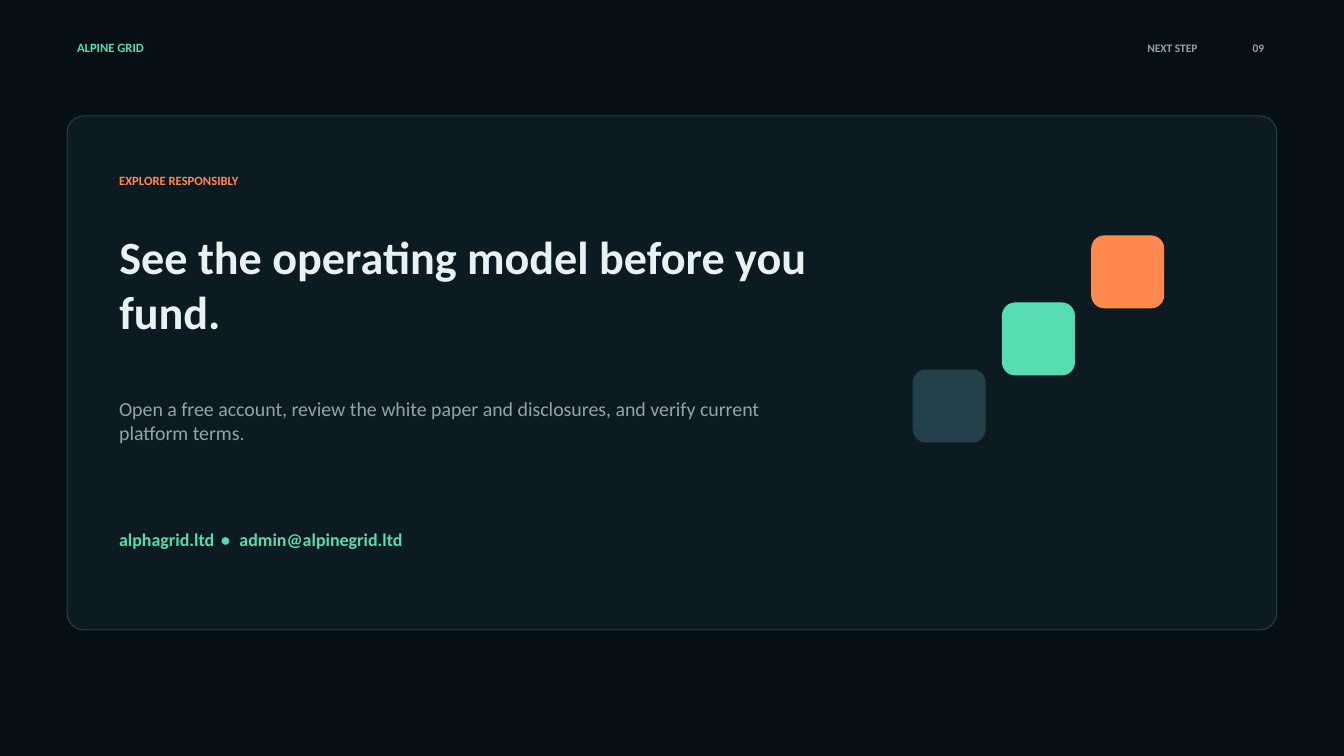
from dataclasses import dataclass

from pptx import Presentation
from pptx.dml.color import RGBColor
from pptx.enum import shapes, text
from pptx.util import Pt

NIGHT = RGBColor(0x06, 0x10, 0x14)
PANEL = RGBColor(0x0C, 0x1B, 0x21)
SLATE = RGBColor(0x24, 0x40, 0x4A)
MINT = RGBColor(0x56, 0xDC, 0xB0)
ORANGE = RGBColor(0xFF, 0x8A, 0x50)
MIST = RGBColor(0x91, 0xA4, 0xAC)
WHITE = RGBColor(0xE8, 0xF1, 0xF3)

LEFT, RIGHT = text.PP_ALIGN.LEFT, text.PP_ALIGN.RIGHT
HEADER_TOP, HEADER_HEIGHT = 25.2, 18
CONTENT_LEFT = 78
TILE_SIZE, TILE_STEP_X, TILE_STEP_Y = 51.4, 63.75, 47.9
FIRST_TILE_LEFT, FIRST_TILE_TOP = 652.3, 264.3


@dataclass
class Label:
    words: tuple[str, ...]
    left: float
    top: float
    width: float
    height: float
    size: float
    color: RGBColor
    bold: bool = True
    align: text.PP_ALIGN = LEFT


@dataclass
class Card:
    left: float
    top: float
    width: float
    height: float
    corner: float
    fill: RGBColor
    line: RGBColor


def write_label(box, label: Label) -> None:
    """Place a text box or placeholder and fill it with formatted runs."""
    for side in ("left", "top", "width", "height"):
        setattr(box, side, Pt(getattr(label, side)))
    frame_format = {"word_wrap": True, "auto_size": text.MSO_AUTO_SIZE.NONE,
                    "vertical_anchor": text.MSO_ANCHOR.MIDDLE}
    for key, value in frame_format.items():
        setattr(box.text_frame, key, value)
    paragraph = box.text_frame.paragraphs[0]
    paragraph.alignment = label.align
    font_format = {"name": "Calibri", "size": Pt(label.size), "bold": label.bold}
    for words in label.words:
        run = paragraph.add_run()
        run.text = words
        for key, value in font_format.items():
            setattr(run.font, key, value)
        run.font.color.rgb = label.color


def add_label(slide, label: Label):
    box = slide.shapes.add_textbox(0, 0, 0, 0)
    write_label(box, label)
    return box


def add_card(slide, card: Card) -> None:
    shape = slide.shapes.add_shape(
        shapes.MSO_SHAPE.ROUNDED_RECTANGLE,
        Pt(card.left), Pt(card.top), Pt(card.width), Pt(card.height))
    shape.adjustments[0] = card.corner
    shape.shadow.inherit = False
    shape.fill.solid()
    shape.fill.fore_color.rgb = card.fill
    shape.line.color.rgb = card.line
    shape.line.width = Pt(0.75)


def main() -> None:
    deck = Presentation()
    deck.slide_width, deck.slide_height = Pt(960), Pt(540)
    slide = deck.slides.add_slide(deck.slide_layouts.get_by_name("Title Only"))
    slide.background.fill.solid()
    slide.background.fill.fore_color.rgb = NIGHT

    # Panel and rising steps
    add_card(slide, Card(48, 82.8, 864, 367.2, 0.033, PANEL, SLATE))
    for step, color in enumerate((SLATE, MINT, ORANGE)):
        add_card(slide, Card(FIRST_TILE_LEFT + step * TILE_STEP_X,
                             FIRST_TILE_TOP - step * TILE_STEP_Y,
                             TILE_SIZE, TILE_SIZE, 0.175, color, color))

    # Header
    for label in (
        Label(("ALPINE GRID",), 48, HEADER_TOP, 172.8, HEADER_HEIGHT, 9, MINT),
        Label(("NEXT STEP",), 660, HEADER_TOP, 202.5, HEADER_HEIGHT, 8.2, MIST, align=RIGHT),
        Label(("09",), 870, HEADER_TOP, 40.2, HEADER_HEIGHT, 8.2, MIST, align=RIGHT),
    ):
        add_label(slide, label)

    # Invitation
    add_label(slide, Label(("EXPLORE RESPONSIBLY",), CONTENT_LEFT, 120.2, 375, 18, 9, ORANGE))
    headline = slide.shapes.title
    write_label(headline, Label(("See the operating model before you fund.",),
                                CONTENT_LEFT, 154, 540, 97.2, 33, WHITE))
    # Keep the headline in front of the panel
    slide.shapes._spTree.append(headline._element)
    add_label(slide, Label(
        ("Open a free account, review the white paper and disclosures, "
         "and verify current platform terms.",),
        CONTENT_LEFT, 266.4, 502.5, 67.7, 14.2, MIST, bold=False))

    # Contact line, with letter spacing around the dot
    contact = add_label(slide, Label(("alphagrid.ltd", " • ", "admin@alpinegrid.ltd"),
                                     CONTENT_LEFT, 370.8, 405, 28.8, 12.8, MINT))
    dot = contact.text_frame.paragraphs[0].runs[1]
    dot.font._element.set("spc", "190")

    deck.save("out.pptx")


if __name__ == "__main__":
    main()
